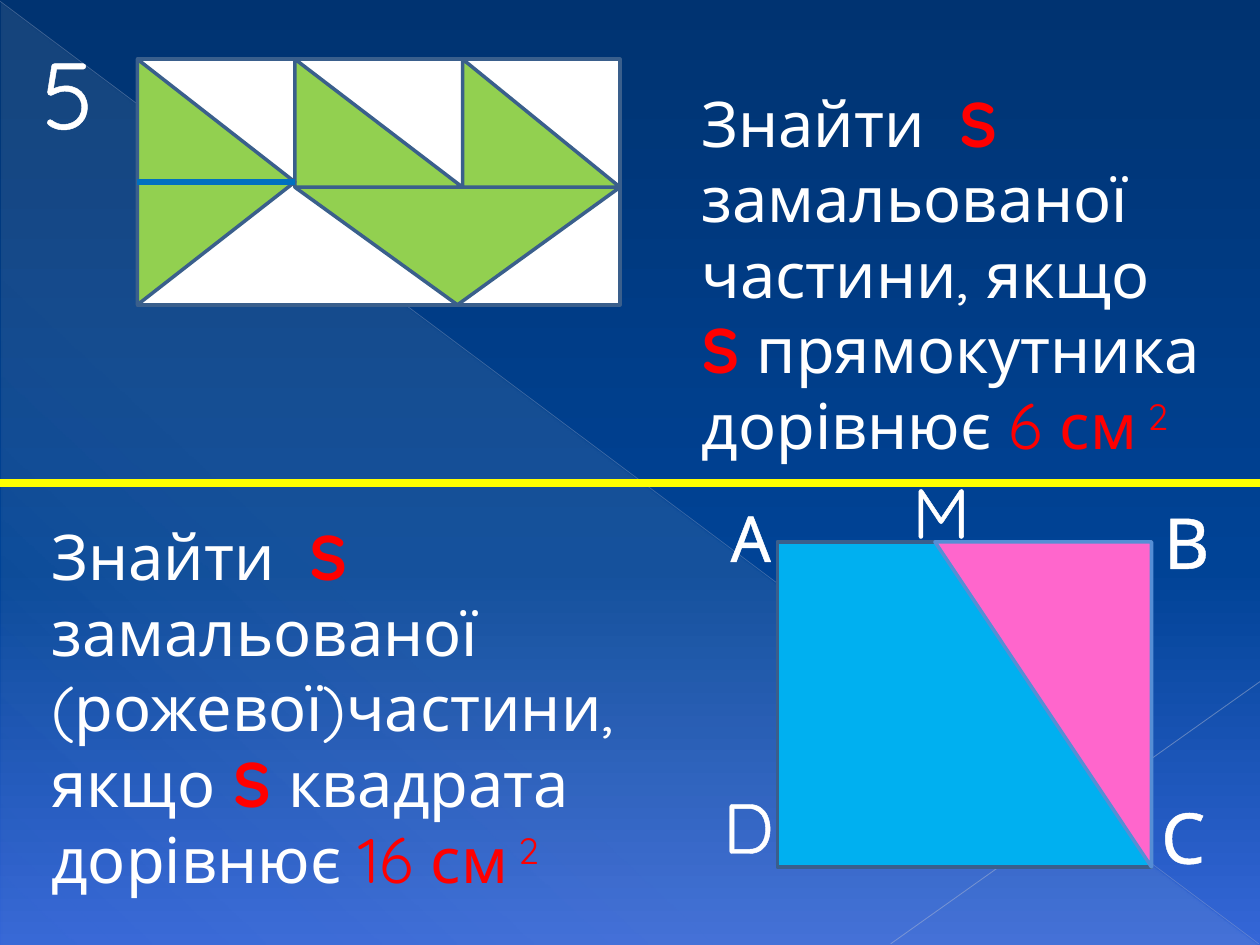
from lxml.etree import SubElement
from pptx import Presentation
from pptx.dml.color import RGBColor
from pptx.enum.shapes import MSO_CONNECTOR as Connector, MSO_SHAPE as Shape
from pptx.enum.text import MSO_AUTO_SIZE as AutoSize, PP_ALIGN as Align
from pptx.oxml.ns import qn
from pptx.util import Pt

FONT = "Quicksand"
WHITE, RED, GREEN, NAVY = "FFFFFF", "FF0000", "92D050", "3A5F8C"


def color(hex_string):
    return RGBColor.from_string(hex_string)


def add_alpha(color_element, percent):
    SubElement(color_element, qn("a:alpha"), val=str(percent * 1000))


def set_gradient(fill, container, stops, angle):
    """Give a fill the (position, colour, opacity) stops; angle runs clockwise."""
    fill.gradient()
    gradient = container.find(qn("a:gradFill"))
    for child in list(gradient):
        gradient.remove(child)
    stop_list = SubElement(gradient, qn("a:gsLst"))
    for position, hex_string, opacity in stops:
        stop = SubElement(stop_list, qn("a:gs"), pos=str(position * 1000))
        add_alpha(SubElement(stop, qn("a:srgbClr"), val=hex_string), opacity)
    SubElement(gradient, qn("a:lin"), ang=str(angle * 60000), scaled="0")


def add_figure(slide, kind, left, top, width, height, fill=None, line=NAVY, rotation=0):
    figure = slide.shapes.add_shape(kind, Pt(left), Pt(top), Pt(width), Pt(height))
    figure.shadow.inherit = False
    figure.rotation = rotation
    if fill:
        figure.fill.solid()
        figure.fill.fore_color.rgb = color(fill)
    if line:
        figure.line.color.rgb = color(line)
        figure.line.width = Pt(2)
    else:
        figure.line.fill.background()
    return figure


def add_line(slide, x1, y1, x2, y2, hex_string, width, opacity=100):
    line = slide.shapes.add_connector(Connector.STRAIGHT, Pt(x1), Pt(y1), Pt(x2), Pt(y2))
    line.line.color.rgb = color(hex_string)
    line.line.width = Pt(width)
    properties = line._element.spPr
    if opacity < 100:
        add_alpha(properties.find(".//" + qn("a:srgbClr")), opacity)
    SubElement(properties, qn("a:effectLst"))
    return line


def write_run(paragraph, text, size=36, hex_string=WHITE, bold=False,
              superscript=False, outline=False):
    run = paragraph.add_run()
    run.text = text
    font = run.font
    font.name, font.size, font.bold = FONT, Pt(size), bold
    font.color.rgb = color(hex_string)
    properties = run._r.get_or_add_rPr()
    if superscript:
        properties.set("baseline", "30000")
    if outline:
        contour = SubElement(properties, qn("a:ln"), w=str(Pt(1.45)))
        fill = SubElement(contour, qn("a:solidFill"))
        SubElement(fill, qn("a:srgbClr"), val=hex_string)
        properties.insert(0, contour)


def add_frame(slide, left, top, width, height, wrap=True):
    box = slide.shapes.add_textbox(Pt(left), Pt(top), Pt(width), Pt(height))
    frame = box.text_frame
    frame.word_wrap = wrap
    frame.auto_size = AutoSize.SHAPE_TO_FIT_TEXT
    return frame


def add_label(slide, text, left, top, width, height, size=40):
    paragraph = add_frame(slide, left, top, width, height, wrap=False).paragraphs[0]
    paragraph.alignment = Align.CENTER
    write_run(paragraph, text, size=size, outline=True)


def add_task(slide, left, top, width, height, paragraphs):
    """Write the task; each run is (text, format)."""
    frame = add_frame(slide, left, top, width, height)
    for index, runs in enumerate(paragraphs):
        paragraph = frame.add_paragraph() if index else frame.paragraphs[0]
        for text, style in runs:
            write_run(paragraph, text, **style)


def add_backdrop(slide, width, height):
    fill = slide.background.fill
    fill.solid()
    set_gradient(fill, slide._element.cSld.bg.bgPr,
                 [(0, "003371", 100), (60, "004396", 100), (100, "3566D7", 100)], 90)
    # Pale corner and the thin diagonals
    corner = add_figure(slide, Shape.RIGHT_TRIANGLE, 0.7, 1.4, width - 1.4, height - 1.4,
                        line=None)
    set_gradient(corner.fill, corner._element.spPr,
                 [(0, "EEECE1", 10), (70, "EEECE1", 8), (100, "EEECE1", 1)], 133)
    add_line(slide, 0, 0.7, width - 0.7, height - 0.7, "ADB6CE", 0.39, opacity=35)
    add_line(slide, width, 389.5, 509, height - 0.7, "B6BED3", 0.47, opacity=45)


def add_rectangle_puzzle(slide, left, top, width, height):
    side = 90                      # width of the outer columns
    upper = 73.2                   # height of the upper row
    middle = width - 2 * side
    rectangle = add_figure(slide, Shape.RECTANGLE, left, top, width, height, WHITE)
    # Large triangle pointing down
    add_figure(slide, Shape.ISOSCELES_TRIANGLE, left + side, top + upper,
               width - side, height - upper, GREEN, rotation=180)
    # Two right triangles in the upper row
    for offset, base in ((side, middle), (side + middle, side)):
        add_figure(slide, Shape.RIGHT_TRIANGLE, left + offset, top, base, upper, GREEN)
    # Triangle on the left side, turned to point right
    add_figure(slide, Shape.ISOSCELES_TRIANGLE, left + (side - height) / 2,
               top + (height - side) / 2, height, side, GREEN, rotation=90)
    center = top + height / 2
    altitude = add_line(slide, left + side, center, left, center, "0070C0", 3)
    altitude.end_connect(rectangle, 1)


def add_square_puzzle(slide, left, top, width, height):
    pink_width = 123.8
    add_figure(slide, Shape.RECTANGLE, left, top, width, height, "00B0F0")
    add_figure(slide, Shape.RIGHT_TRIANGLE, left + width - pink_width, top,
               pink_width, height, "FF66CC", line="558ED5", rotation=180)
    # Vertex letters, offset from the top left corner of the square
    for letter, dx, dy, box_width, box_height, size in (
            ("M", 67.7, -45.4, 51.8, 55.4, 40),
            ("D", -38.9, 134.6, 44.6, 55.4, 40),
            ("С", 208.1, 140.4, 47.5, 55.4, 40),
            ("В", 213.8, -28.1, 37.4, 55.4, 40),
            ("А", -33.8, -28.1, 32.4, 51.1, 36)):
        add_label(slide, letter, left + dx, top + dy, box_width, box_height, size)


def main():
    deck = Presentation()
    deck.slide_width, deck.slide_height = Pt(720), Pt(540)
    slide = deck.slides.add_slide(deck.slide_layouts[6])
    plain, red = {}, {"hex_string": RED}
    area = {"hex_string": RED, "bold": True}
    square_sign = {"hex_string": RED, "superscript": True}

    add_backdrop(slide, 720, 540)

    # Upper problem
    add_label(slide, "5", 16.6, 16.6, 44.6, 72.7, size=54)
    add_rectangle_puzzle(slide, 78.5, 33.8, 275.8, 140.4)
    add_task(slide, 393.8, 44.6, 303.8, 225.4, [
        [("Знайти  ", plain), ("S ", area), ("замальованої частини, якщо", plain)],
        [("S ", area), ("прямокутника дорівнює ", plain), ("6 см", red),
         (" 2", square_sign)]])

    # Lower problem
    add_square_puzzle(slide, 444.2, 309.6, 213.8, 185.8)
    add_line(slide, 0, 275.8, 720, 275.8, "FFFF00", 4.5)
    add_task(slide, 22.3, 292.3, 382.3, 225.4, [
        [("Знайти  ", plain), ("S ", area),
         ("замальованої (рожевої)частини, якщо", plain), (" S ", area),
         ("квадрата дорівнює ", plain), ("16 см", red), (" 2", square_sign)]])

    deck.save("out.pptx")


if __name__ == "__main__":
    main()
